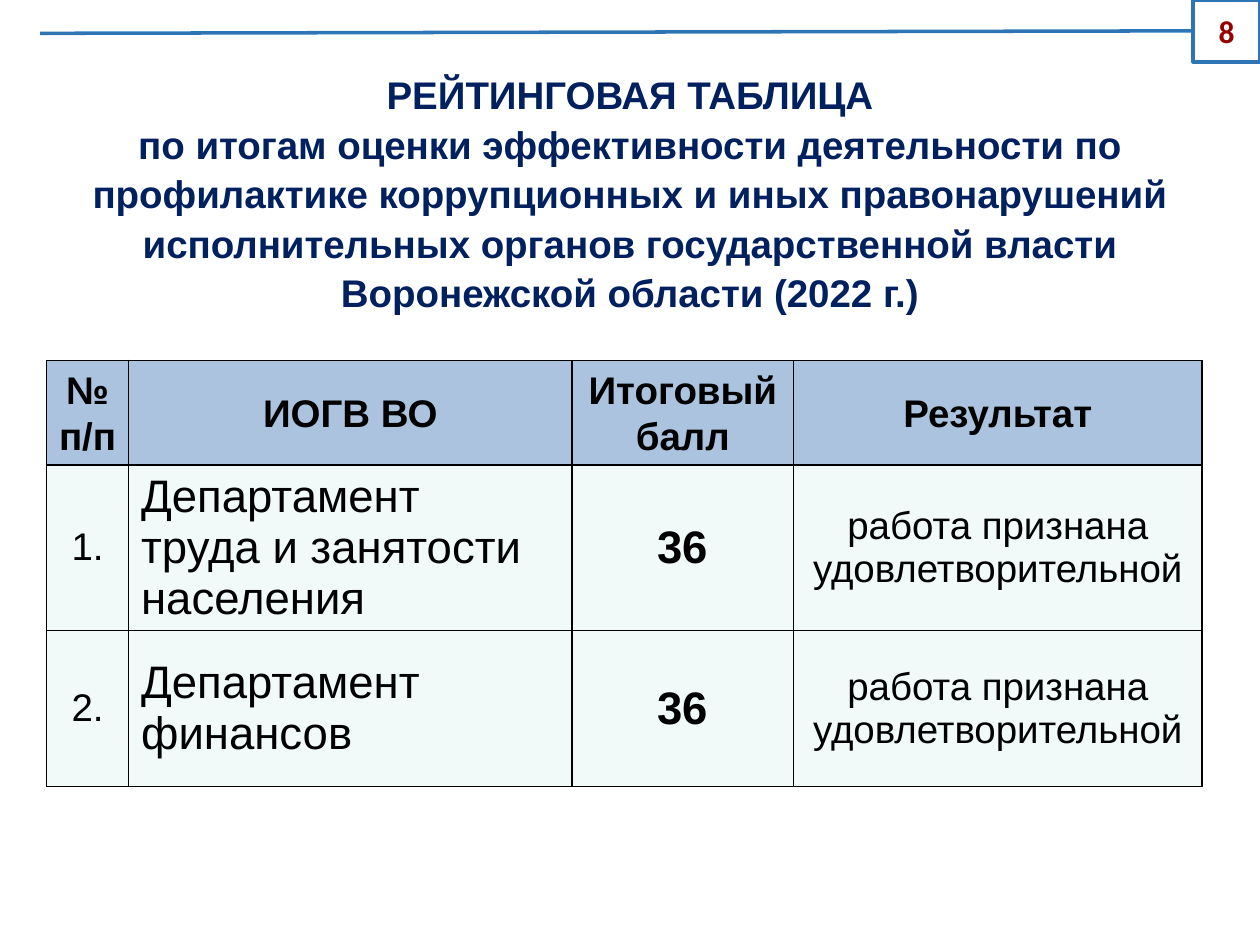
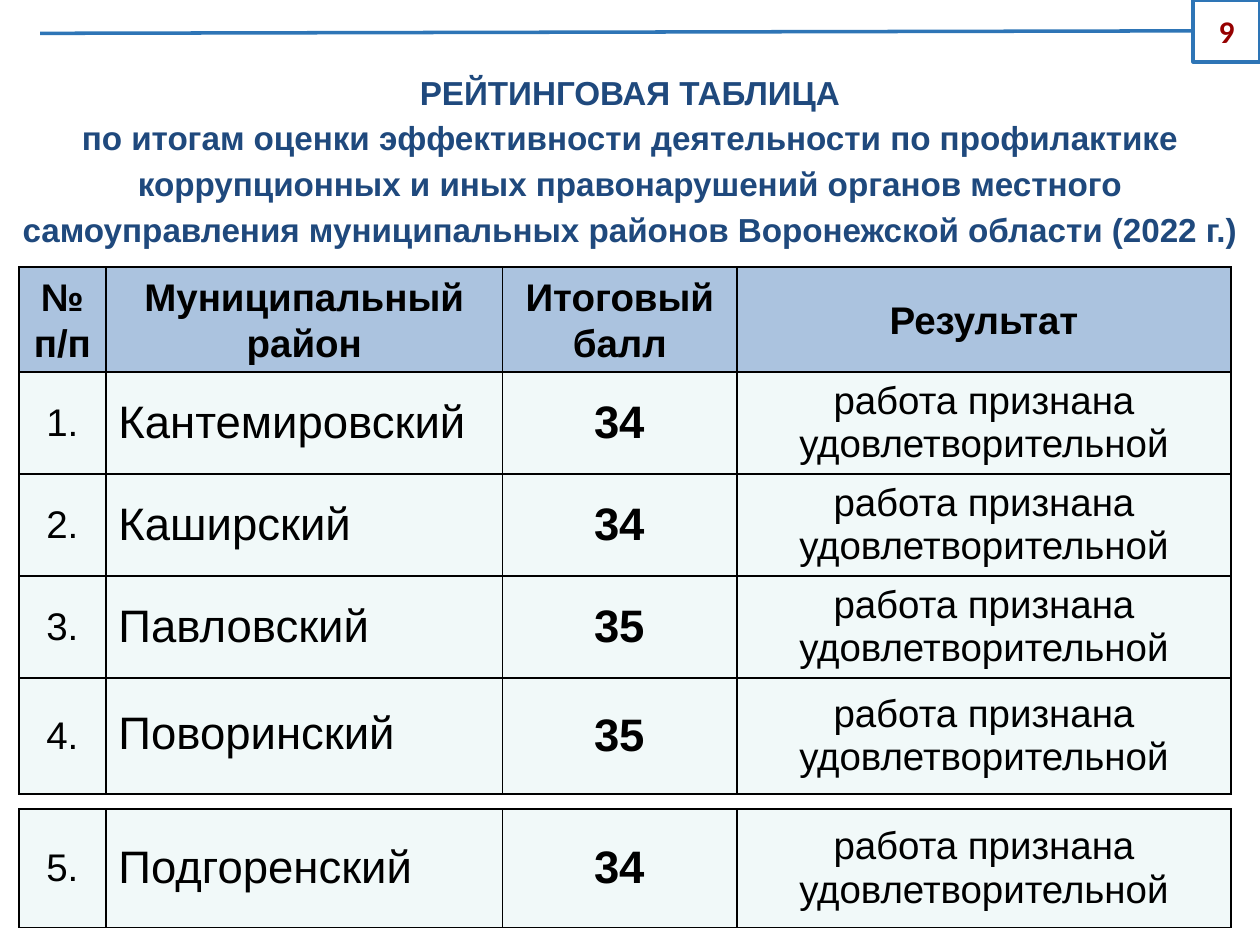
"""Builds two rating-table slides with a shared title style and page badge."""
import lxml.etree
import pptx
import pptx.dml.color
import pptx.enum.shapes
import pptx.enum.text
import pptx.util

Pt = pptx.util.Pt
Align = pptx.enum.text.PP_ALIGN
Anchor = pptx.enum.text.MSO_ANCHOR
NAVY, STEEL, BLUE, RED, BLACK = "002060", "1F497D", "2E75B6", "960000", "000000"
HEAD, BODY = "ABC3DF", "F1F9F9"
NS = "http://schemas.openxmlformats.org/drawingml/2006/main"
EDGE = (
    '<a:{0} xmlns:a="{1}" w="12700"><a:solidFill><a:srgbClr val="{2}"/>'
    "</a:solidFill></a:{0}>"
)


def ink(code):
    """Turn a hex string into a colour."""
    return pptx.dml.color.RGBColor.from_string(code)


def style(frame, size, bold, code, align=Align.CENTER, space=1.0, face="Arial"):
    """Format every paragraph of a text frame."""
    for para in frame.paragraphs:
        for key, val in {"alignment": align, "line_spacing": space}.items():
            setattr(para, key, val)
        for key, val in {"name": face, "size": Pt(size), "bold": bold}.items():
            setattr(para.font, key, val)
        para.font.color.rgb = ink(code)


deck = pptx.Presentation()
deck.slide_width, deck.slide_height = pptx.util.Inches(10), pptx.util.Inches(7.5)
unit = deck.slide_width // 100

lead = "РЕЙТИНГОВАЯ ТАБЛИЦА\vпо итогам оценки эффективности деятельности по профилактике коррупционных и иных правонарушений "
verdict = "работа признана удовлетворительной"
wide = [6.9, 31.5, 18.6, 39.2]

pages = [
    {
        "page": "8",
        "title": lead + "исполнительных органов государственной власти Воронежской области (2022 г.)",
        "box": (0, 4.9, 100, 26.3),
        "anchor": Anchor.TOP,
        "font": (22, True, NAVY, Align.CENTER, 1.07),
        "grids": [
            {
                "at": (3.7, 28.6),
                "cols": [6.5, 35.2, 17.6, 32.4],
                "rows": [8.1, 13, 12.4],
                "head": "ИОГВ ВО",
                "first": 1,
                "data": [("Департамент\nтруда и занятости населения", 36), ("Департамент финансов", 36)],
            }
        ],
    },
    {
        "page": "9",
        "title": lead + "органов местного самоуправления муниципальных районов Воронежской области (2022 г.)",
        "box": (0, 3.8, 100, 17.4),
        "anchor": Anchor.MIDDLE,
        "font": (19, True, STEEL, Align.CENTER, 1.15),
        "grids": [
            {
                "at": (1.5, 21.2),
                "cols": wide,
                "rows": [8.3, 8.1, 8.1, 8.1, 9.2],
                "head": "Муниципальный район",
                "first": 1,
                "data": [("Кантемировский", 34), ("Каширский", 34), ("Павловский", 35), ("Поворинский", 35)],
            },
            {
                "at": (1.5, 64.2),
                "cols": wide,
                "rows": [9.4],
                "head": None,
                "first": 5,
                "data": [("Подгоренский", 34)],
            },
        ],
    },
]

looks = [
    (22, False, BLACK),
    (26, False, BLACK, Align.LEFT),
    (26, True, BLACK),
    (22, False, BLACK),
]

for page in pages:
    slide = deck.slides.add_slide(deck.slide_layouts[5])
    title = slide.shapes.title
    for key, val in zip(("left", "top", "width", "height"), page["box"]):
        setattr(title, key, int(val * unit))
    frame = title.text_frame
    frame.text = page["title"]
    form = {
        "word_wrap": True,
        "auto_size": pptx.enum.text.MSO_AUTO_SIZE.NONE,
        "vertical_anchor": page["anchor"],
    }
    for key, val in form.items():
        setattr(frame, key, val)
    style(frame, *page["font"])

    for grid in page["grids"]:
        lines = [
            (f"{num}.", name, str(score), verdict)
            for num, (name, score) in enumerate(grid["data"], grid["first"])
        ]
        if grid["head"]:
            lines.insert(0, ("№ п/п", grid["head"], "Итоговый балл", "Результат"))
        spots = [*grid["at"], sum(grid["cols"]), sum(grid["rows"])]
        table = slide.shapes.add_table(
            len(lines), len(wide), *[int(val * unit) for val in spots]
        ).table
        table.first_row = table.horz_banding = False
        for col, size in zip(table.columns, grid["cols"]):
            col.width = int(size * unit)
        for row, size, line in zip(table.rows, grid["rows"], lines):
            row.height = int(size * unit)
            top = bool(grid["head"]) and line is lines[0]
            for col, (cell, text) in enumerate(zip(row.cells, line)):
                cell.text = text
                cell.vertical_anchor = Anchor.MIDDLE
                if col == 0:
                    cell.margin_left = cell.margin_right = unit // 2
                props = cell._tc.get_or_add_tcPr()
                for side in ("lnL", "lnR", "lnT", "lnB"):
                    props.append(lxml.etree.fromstring(EDGE.format(side, NS, BLACK)))
                cell.fill.solid()
                cell.fill.fore_color.rgb = ink(HEAD if top else BODY)
                if top:
                    style(cell.text_frame, 22, True, BLACK, space=1.07)
                else:
                    style(cell.text_frame, *looks[col])
                if text == "Поворинский":
                    cell.text_frame.paragraphs[0].line_spacing = 0.9

    badge = slide.shapes.add_shape(
        pptx.enum.shapes.MSO_SHAPE.LINE_CALLOUT_1,
        *[int(val * unit) for val in (94.7, 0, 5.3, 4.9)],
    )
    for spot, val in enumerate((0.5, -0.01, 0.54, -17.27)):
        badge.adjustments[spot] = val
    badge.shadow.inherit = False
    badge.fill.background()
    badge.line.color.rgb = ink(BLUE)
    badge.line.width = Pt(2)
    badge.text_frame.text = page["page"]
    badge.text_frame.vertical_anchor = Anchor.MIDDLE
    style(badge.text_frame, 18, True, RED, face="Calibri")

deck.save("out.pptx")
